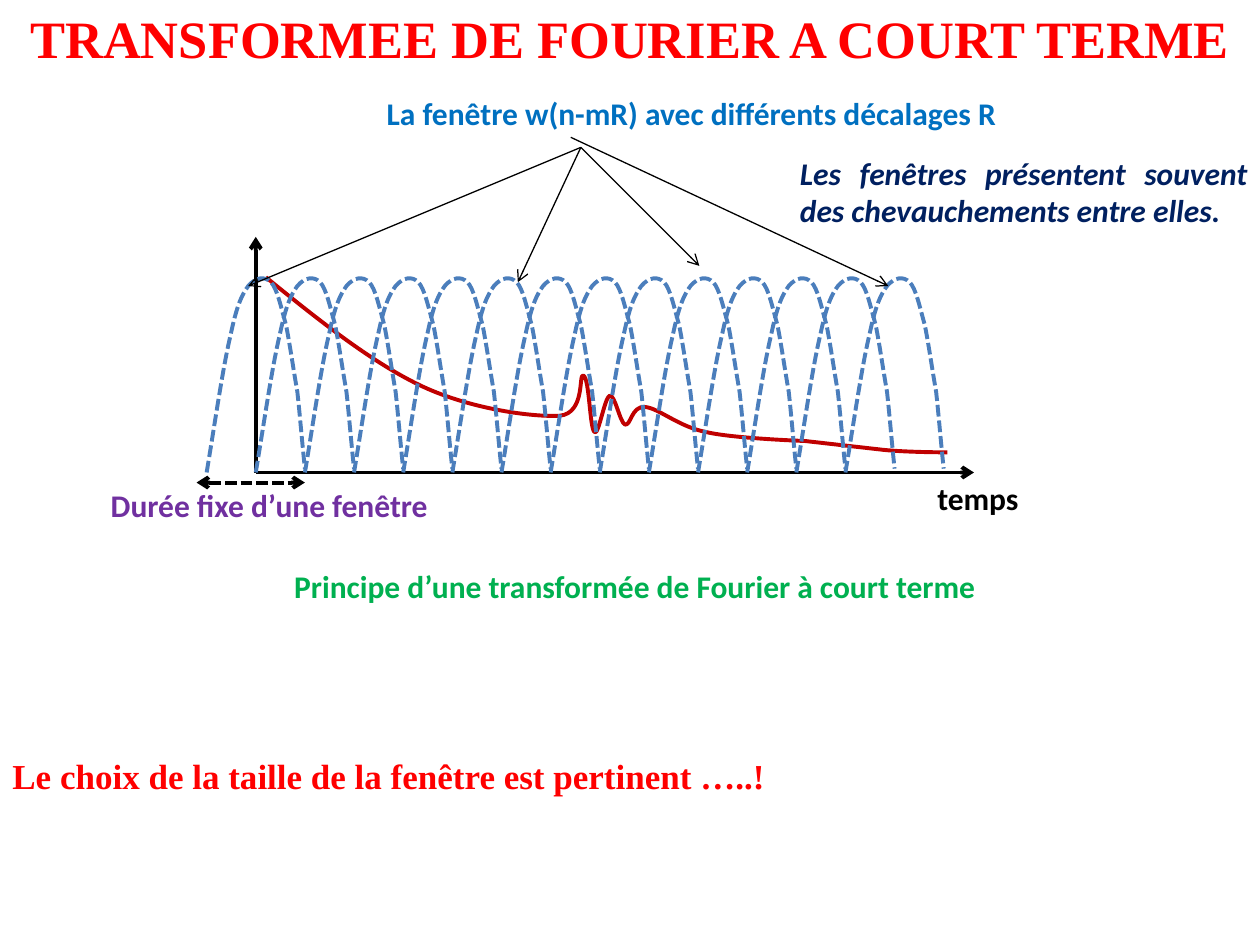
from lxml import etree
from pptx import Presentation
from pptx.dml.color import RGBColor
from pptx.enum.dml import MSO_LINE
from pptx.enum.shapes import MSO_CONNECTOR
from pptx.enum.text import MSO_AUTO_SIZE, PP_ALIGN
from pptx.oxml.ns import qn
from pptx.util import Inches, Pt

STRAIGHT = MSO_CONNECTOR.STRAIGHT
SYS_DASH = MSO_LINE.SQUARE_DOT
FIT_SHAPE = MSO_AUTO_SIZE.SHAPE_TO_FIT_TEXT
LEFT, CENTER, JUSTIFY = PP_ALIGN.LEFT, PP_ALIGN.CENTER, PP_ALIGN.JUSTIFY

BODY = {"name": "Calibri", "size": Pt(18), "bold": True}
HEADING = {"name": "Times New Roman", "size": Pt(30), "bold": True}
REMARK = {**HEADING, "size": Pt(20)}

WINDOW_COUNT = 14
WINDOW_STEP = 0.39
WINDOW_CURVE = [
    (0, 1.56), (0.07, 1.14), (0.13, 0.72), (0.19, 0.47),
    (0.24, 0.23), (0.28, 0.15), (0.33, 0.08),
    (0.39, 0.01), (0.46, 0), (0.51, 0.05),
    (0.56, 0.1), (0.59, 0.25), (0.63, 0.39),
    (0.66, 0.54), (0.69, 0.75), (0.72, 0.92),
    (0.74, 1.1), (0.76, 1.35), (0.78, 1.53),
]
SIGNAL_CURVE = [
    (0, 0), (0.43, 0.35), (0.86, 0.69), (1.25, 0.87),
    (1.64, 1.05), (2.12, 1.11), (2.33, 1.1),
    (2.54, 1.08), (2.48, 0.76), (2.52, 0.78),
    (2.57, 0.8), (2.57, 1.21), (2.61, 1.23),
    (2.64, 1.26), (2.69, 0.95), (2.73, 0.94),
    (2.77, 0.93), (2.81, 1.15), (2.85, 1.17),
    (2.9, 1.18), (2.9, 1.02), (3.01, 1.03),
    (3.12, 1.04), (3.28, 1.19), (3.5, 1.23),
    (3.71, 1.28), (4.28, 1.3), (4.28, 1.3),
    (4.28, 1.3), (4.9, 1.37), (4.9, 1.37),
    (5.09, 1.39), (5.41, 1.39), (5.41, 1.39),
]


def rgb(value):
    """Return the colour for a hex string."""
    return RGBColor.from_string(value)


def style_line(line, color, width, dash=None):
    """Set the colour, width and dash of a line."""
    line.color.rgb = rgb(color)
    for key, value in {"width": Pt(width), "dash_style": dash}.items():
        setattr(line, key, value)


def add_caption(slide, box, wording, color, style, align=LEFT):
    """Write one paragraph in the given box."""
    caption = slide.shapes.add_textbox(*map(Inches, box))
    frame = caption.text_frame
    for key, value in {"word_wrap": True, "auto_size": FIT_SHAPE}.items():
        setattr(frame, key, value)
    paragraph = frame.paragraphs[0]
    paragraph.alignment = align
    run = paragraph.add_run()
    run.text = wording
    for key, value in style.items():
        setattr(run.font, key, value)
    run.font.color.rgb = rgb(color)


def add_arrow(slide, start, end, width, dash=None, ends=("tailEnd",)):
    """Draw a black line with open arrowheads at the named ends."""
    arrow = slide.shapes.add_connector(STRAIGHT, *map(Inches, start + end))
    style_line(arrow.line, "000000", width, dash)
    outline = arrow.line._get_or_add_ln()
    for tag in ends:
        etree.SubElement(outline, qn(f"a:{tag}"), type="arrow")
    etree.SubElement(arrow._element.spPr, qn("a:effectLst"))


def bend_segments(curve):
    """Turn each three line segments of a freeform into one cubic Bézier."""
    outline = next(curve._element.iter(qn("a:path")))
    segments = outline.findall(qn("a:lnTo"))
    for i in range(0, len(segments), 3):
        bezier = etree.SubElement(outline, qn("a:cubicBezTo"))
        for segment in segments[i:i + 3]:
            bezier.append(segment[0])
            outline.remove(segment)


def add_curve(slide, left, top, controls, color, dash=None):
    """Draw an open curve whose controls are offsets from left and top."""
    points = [(Inches(left + x), Inches(top + y)) for x, y in controls]
    builder = slide.shapes.build_freeform(*points[0])
    builder.add_line_segments(points[1:], close=False)
    curve = builder.convert_to_shape()
    bend_segments(curve)
    curve.shadow.inherit = False
    curve.fill.background()
    style_line(curve.line, color, 2.25, dash)


def add_plot(slide, box):
    """Draw the axes, the signal and the overlapping windows in the box."""
    left, top, width, height = box
    origin = (left, top + height)
    add_arrow(slide, origin, (left + width, top + height), 2.25)
    add_arrow(slide, origin, (left, top), 2.25)
    add_curve(slide, left + 0.08, top + 0.32, SIGNAL_CURVE, "C00000")
    for index in range(WINDOW_COUNT):
        add_curve(slide, left + (index - 1) * WINDOW_STEP, top + 0.31,
                  WINDOW_CURVE, "4B7EBC", SYS_DASH)
    add_caption(slide, (left + 5.31, top + height, 1.02, 0.4), "temps", "000000", BODY)


def add_window_callout(slide, box):
    """Label the windows and point at four of them from the label box."""
    left, top = box[:2]
    add_caption(slide, box, "La fenêtre w(n-mR) avec différents décalages R", "0070C0", BODY)
    hub = (left + 1.64, top + 0.47)
    for x, y in ((-1, 1.57), (1.14, 1.54), (2.58, 1.41)):
        add_arrow(slide, hub, (left + x, top + y), 0.75)
    add_arrow(slide, (left + 1.56, top + 0.39), (left + 4.08, top + 1.57), 0.75)


def add_duration(slide, box):
    """Mark the fixed length of one window above its label."""
    left, top = box[:2]
    add_arrow(slide, (left + 0.78, top + 0.02), (left + 1.64, top + 0.02), 2.25,
              SYS_DASH, ("headEnd", "tailEnd"))
    add_caption(slide, box, "Durée fixe d’une fenêtre", "7030A0", BODY)


def main():
    """Build the slide and save it."""
    deck = Presentation()
    deck.slide_width, deck.slide_height = Inches(10), Inches(7.5)
    slide = deck.slides.add_slide(deck.slide_layouts[6])
    add_plot(slide, (2.03, 1.88, 5.7, 1.87))
    add_caption(slide, (0, 0, 10, 0.61), "TRANSFORMEE DE FOURIER A COURT TERME",
                "FF0000", HEADING, CENTER)
    add_window_callout(slide, (2.97, 0.7, 5.31, 0.4))
    add_duration(slide, (0.78, 3.81, 2.81, 0.4))
    add_caption(slide, (0.78, 4.45, 8.52, 0.4),
                "Principe d’une transformée de Fourier à court terme", "00B050", BODY, CENTER)
    add_caption(slide, (0, 5.94, 10, 0.77),
                "Le choix de la taille de la fenêtre est pertinent …..!", "FF0000", REMARK, JUSTIFY)
    add_caption(slide, (6.25, 1.17, 3.75, 0.71),
                "Les fenêtres présentent souvent des chevauchements entre elles.",
                "002060", {**BODY, "italic": True}, JUSTIFY)
    deck.save("out.pptx")


if __name__ == "__main__":
    main()
